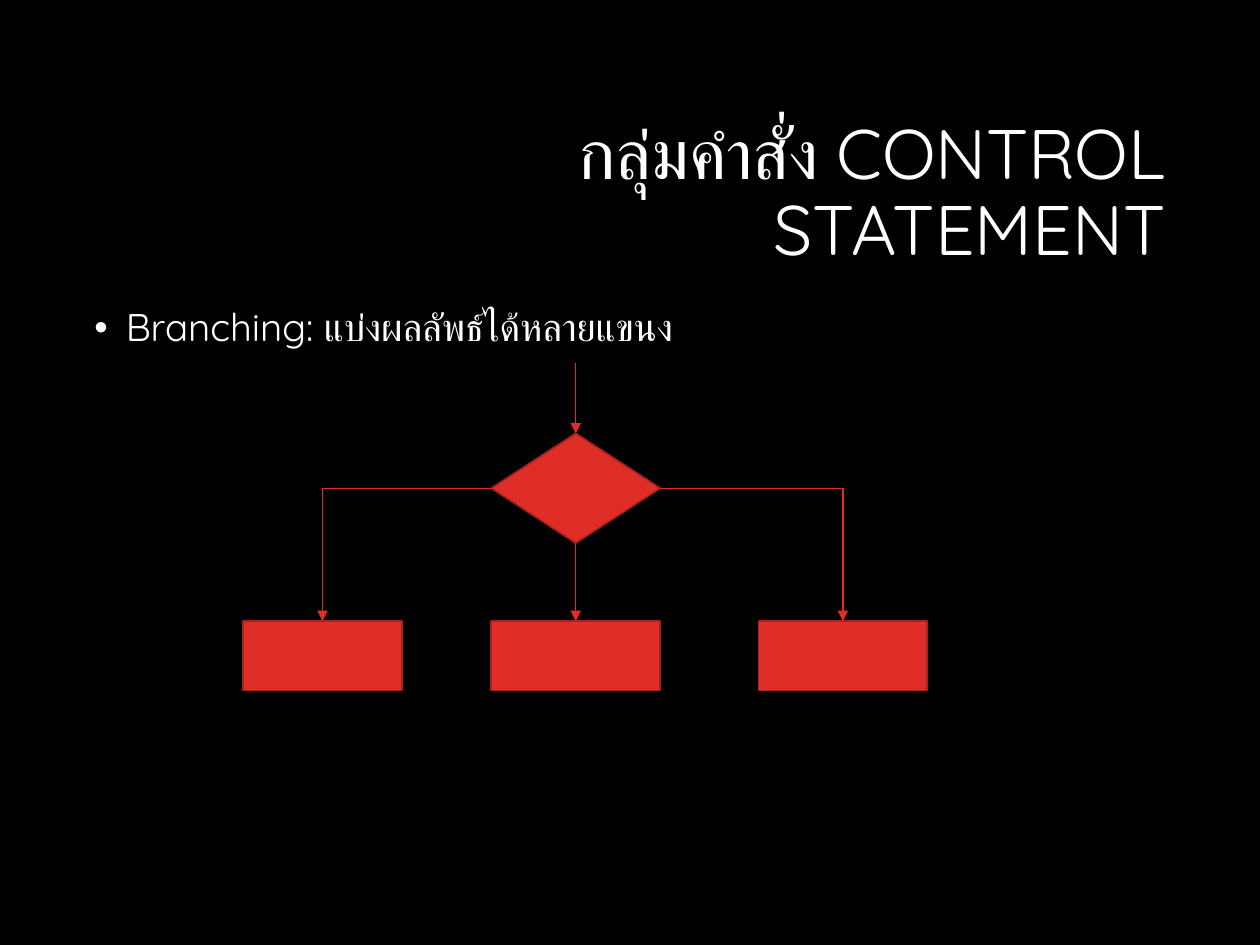
from dataclasses import dataclass

from lxml import etree
from pptx import Presentation
from pptx.dml.color import RGBColor
from pptx.enum.shapes import MSO_CONNECTOR, MSO_SHAPE
from pptx.enum.text import MSO_ANCHOR, PP_ALIGN
from pptx.oxml.ns import qn
from pptx.util import Inches, Pt

STRAIGHT = MSO_CONNECTOR.STRAIGHT
DECISION = MSO_SHAPE.FLOWCHART_DECISION
PROCESS = MSO_SHAPE.FLOWCHART_PROCESS
MIDDLE, TOP_ANCHOR = MSO_ANCHOR.MIDDLE, MSO_ANCHOR.TOP
LEFT_ALIGN, RIGHT_ALIGN = PP_ALIGN.LEFT, PP_ALIGN.RIGHT
TOP, LEFT, BOTTOM, RIGHT = range(4)  # connection sites
SLIDE_W, SLIDE_H = Inches(10), Inches(7.5)


@dataclass(frozen=True)
class Theme:
    background: RGBColor = RGBColor(0x00, 0x00, 0x00)
    text: RGBColor = RGBColor(0xFF, 0xFF, 0xFF)
    accent: RGBColor = RGBColor(0xDF, 0x2E, 0x28)
    border: RGBColor = RGBColor(0xA5, 0x22, 0x1E)
    font: str = "Quicksand"
    title_size: Pt = Pt(40)
    body_size: Pt = Pt(22)
    border_width: Pt = Pt(1)
    arrow_width: Pt = Pt(0.75)


THEME = Theme()


def across(percent):
    return round(SLIDE_W * percent / 100)


def down(percent):
    return round(SLIDE_H * percent / 100)


def add_text(slide, area, text, size, align, anchor, bullet=False):
    """Add one paragraph in an area given as percentages of the slide."""
    left, top, width, height = area
    box = slide.shapes.add_textbox(across(left), down(top), across(width), down(height))
    frame = box.text_frame
    frame.word_wrap = True
    frame.vertical_anchor = anchor
    paragraph = frame.paragraphs[0]
    paragraph.text = text
    paragraph.alignment = align
    paragraph.line_spacing = 0.9
    if bullet:
        properties = paragraph._p.get_or_add_pPr()
        properties.set("marL", str(Inches(0.25)))
        properties.set("indent", str(-Inches(0.25)))
        etree.SubElement(properties, qn("a:buFont"), typeface="Arial")
        etree.SubElement(properties, qn("a:buChar"), char="•")
    paragraph.font.name = THEME.font
    paragraph.font.size = size
    paragraph.font.color.rgb = THEME.text


def add_node(slide, kind, centre, top, width, height):
    """Add a flowchart node centred on a column, in percentages."""
    node = slide.shapes.add_shape(
        kind, across(centre - width / 2), down(top), across(width), down(height))
    node.shadow.inherit = False
    node.fill.solid()
    node.fill.fore_color.rgb = THEME.accent
    node.line.color.rgb = THEME.border
    node.line.width = THEME.border_width
    return node


def add_line(slide, start, end, source=None, target=None, arrow=True):
    """Draw a line; source and target are (node, site) pairs to join."""
    line = slide.shapes.add_connector(STRAIGHT, *start, *end)
    if source:
        line.begin_connect(*source)
    if target:
        line.end_connect(*target)
    line.line.color.rgb = THEME.accent
    line.line.width = THEME.arrow_width
    if arrow:
        etree.SubElement(line.line._get_or_add_ln(), qn("a:tailEnd"), type="triangle")
    etree.SubElement(line._element.spPr, qn("a:effectLst"))


def add_branching(slide):
    # Nodes: one decision above three outcomes
    columns = {LEFT: 25.6, BOTTOM: 45.7, RIGHT: 66.9}
    widths = {LEFT: 12.6, BOTTOM: 13.4, RIGHT: 13.4}
    decision_top, decision_height, outcome_top = 45.87, 11.6, 65.73
    decision = add_node(slide, DECISION, columns[BOTTOM], decision_top,
                        widths[BOTTOM], decision_height)
    outcomes = {site: add_node(slide, PROCESS, columns[site], outcome_top,
                               widths[site], 7.33) for site in columns}

    # Entry arrow
    centre_x = across(columns[BOTTOM])
    add_line(slide, (centre_x, down(38.4)), (centre_x, decision.top),
             target=(decision, TOP))

    # Branches: side branches turn a corner level with the decision
    middle_y = decision.top + decision.height // 2
    sides = {LEFT: decision.left, RIGHT: decision.left + decision.width}
    for site, outcome in outcomes.items():
        x = across(columns[site])
        end = (x, outcome.top)
        if site == BOTTOM:
            add_line(slide, (x, decision.top + decision.height), end,
                     source=(decision, BOTTOM), target=(outcome, TOP))
        else:
            corner = (x, middle_y)
            add_line(slide, (sides[site], middle_y), corner,
                     source=(decision, site), arrow=False)
            add_line(slide, corner, end, target=(outcome, TOP))


def main():
    deck = Presentation()
    deck.slide_width, deck.slide_height = SLIDE_W, SLIDE_H
    slide = deck.slides.add_slide(deck.slide_layouts[6])
    slide.background.fill.solid()
    slide.background.fill.fore_color.rgb = THEME.background

    # Heading and bullet
    add_text(slide, (23.8, 11.2, 69.7, 18.8), "กลุ่มคำสั่ง CONTROL STATEMENT",
             THEME.title_size, RIGHT_ALIGN, MIDDLE)
    add_text(slide, (6.5, 32, 87, 59.33), "Branching: แบ่งผลลัพธ์ได้หลายแขนง",
             THEME.body_size, LEFT_ALIGN, TOP_ANCHOR, bullet=True)

    # Flowchart
    add_branching(slide)
    deck.save("out.pptx")


if __name__ == "__main__":
    main()
